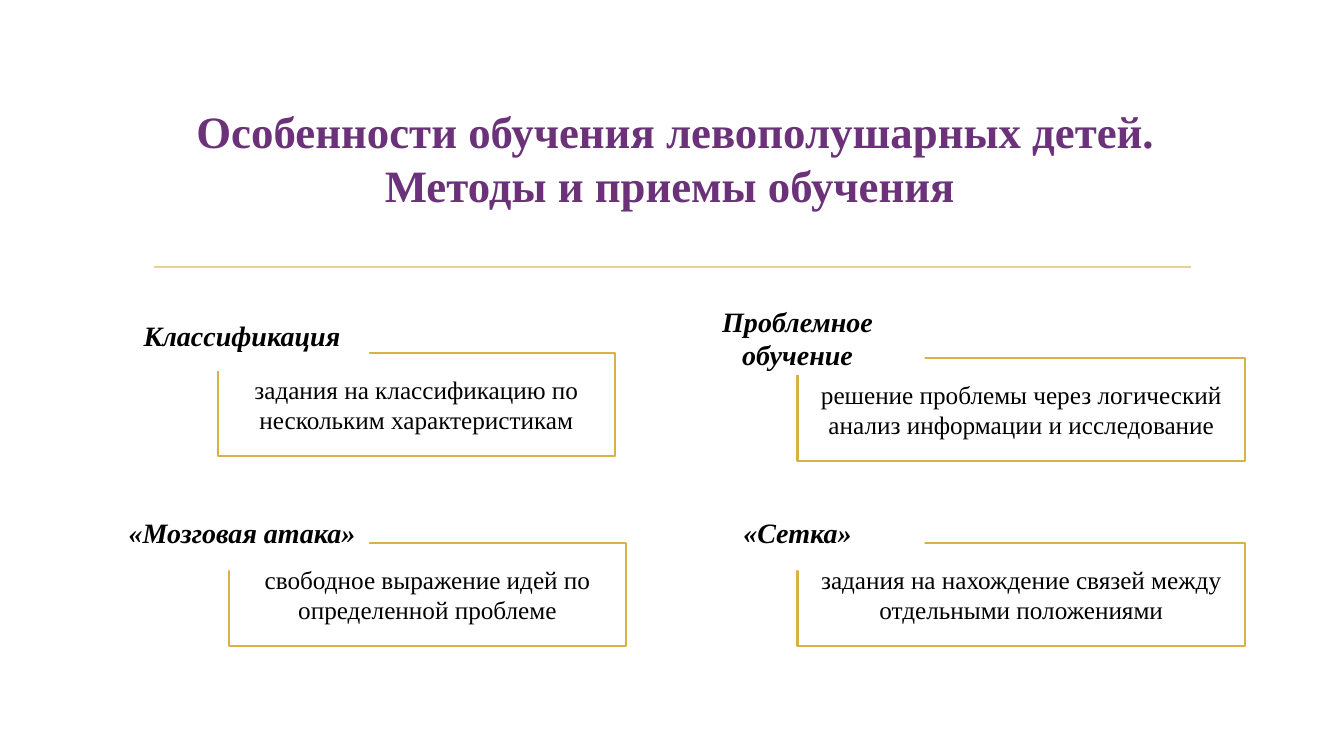
from lxml import etree
from pptx import Presentation
from pptx import util as u
from pptx.dml.color import RGBColor
from pptx.enum import shapes, text
from pptx.oxml.ns import qn


def paint(fmt, tone):
    fmt.solid()
    fmt.fore_color.rgb = RGBColor.from_string(tone)


def write(shape, words, tone, anchor="MIDDLE", **style):
    frame = shape.text_frame
    frame.text = words
    frame.word_wrap = True
    frame.auto_size = text.MSO_AUTO_SIZE.NONE
    frame.vertical_anchor = text.MSO_ANCHOR[anchor]
    for par in frame.paragraphs:
        par.alignment = text.PP_ALIGN.CENTER
        for run in par.runs:
            run.font.name = "Times New Roman"
            paint(run.font.fill, tone)
            for key, value in style.items():
                setattr(run.font, key, value)


deck = Presentation()
deck.slide_width, deck.slide_height = u.Inches(13.33), u.Inches(7.5)
slide = deck.slides.add_slide(deck.slide_layouts[5])

# Rule under the title
rule = slide.shapes.add_connector(
    shapes.MSO_CONNECTOR.STRAIGHT,
    u.Inches(1.53), u.Inches(2.65), u.Inches(11.81), u.Inches(2.65))
paint(rule.line.fill, "E8D191")
rule.line.width = u.Pt(1.25)
etree.SubElement(rule.element.spPr, qn("a:effectLst"))

# Title
title = slide.shapes.title
title.left, title.top = u.Inches(0.48), u.Inches(0.52)
title.width, title.height = u.Inches(12.33), u.Inches(2.08)
write(title,
      " Особенности обучения левополушарных детей.\vМетоды и приемы обучения",
      "6B327A", size=u.Pt(32), bold=True)

# Methods: label, its place and anchor; then description and its place
methods = [
    ("Классификация", (1.14, 2.97, 2.52, 0.71), "MIDDLE",
     "задания на классификацию по нескольким характеристикам",
     (2.16, 3.5, 3.94, 1.02)),
    ("Проблемное\nобучение", (6.65, 2.97, 2.52, 0.75), "TOP",
     "решение проблемы через логический анализ информации и исследование",
     (7.91, 3.55, 4.44, 1.02)),
    ("«Мозговая атака»", (1.14, 4.91, 2.52, 0.75), "MIDDLE",
     "свободное выражение идей по определенной проблеме",
     (2.27, 5.39, 3.94, 1.02)),
    ("«Сетка»", (6.65, 4.91, 2.52, 0.75), "MIDDLE",
     "задания на нахождение связей между отдельными положениями",
     (7.91, 5.39, 4.44, 1.02)),
]
for name, spot, anchor, about, place in methods:
    group = slide.shapes.add_group_shape()

    # Framed description, then the white label over its corner
    frame, label = [
        group.shapes.add_shape(shapes.MSO_SHAPE.RECTANGLE, *map(u.Inches, at))
        for at in (place, spot)]
    for box in (frame, label):
        box.shadow.inherit = False

    frame.fill.background()
    paint(frame.line.fill, "D9B247")
    frame.line.width = u.Pt(1.5)
    write(frame, about, "000000", size=u.Pt(18))

    paint(label.fill, "FFFFFF")
    label.line.fill.background()
    write(label, name, "000000", anchor, size=u.Pt(20), bold=True, italic=True)

deck.save("out.pptx")
